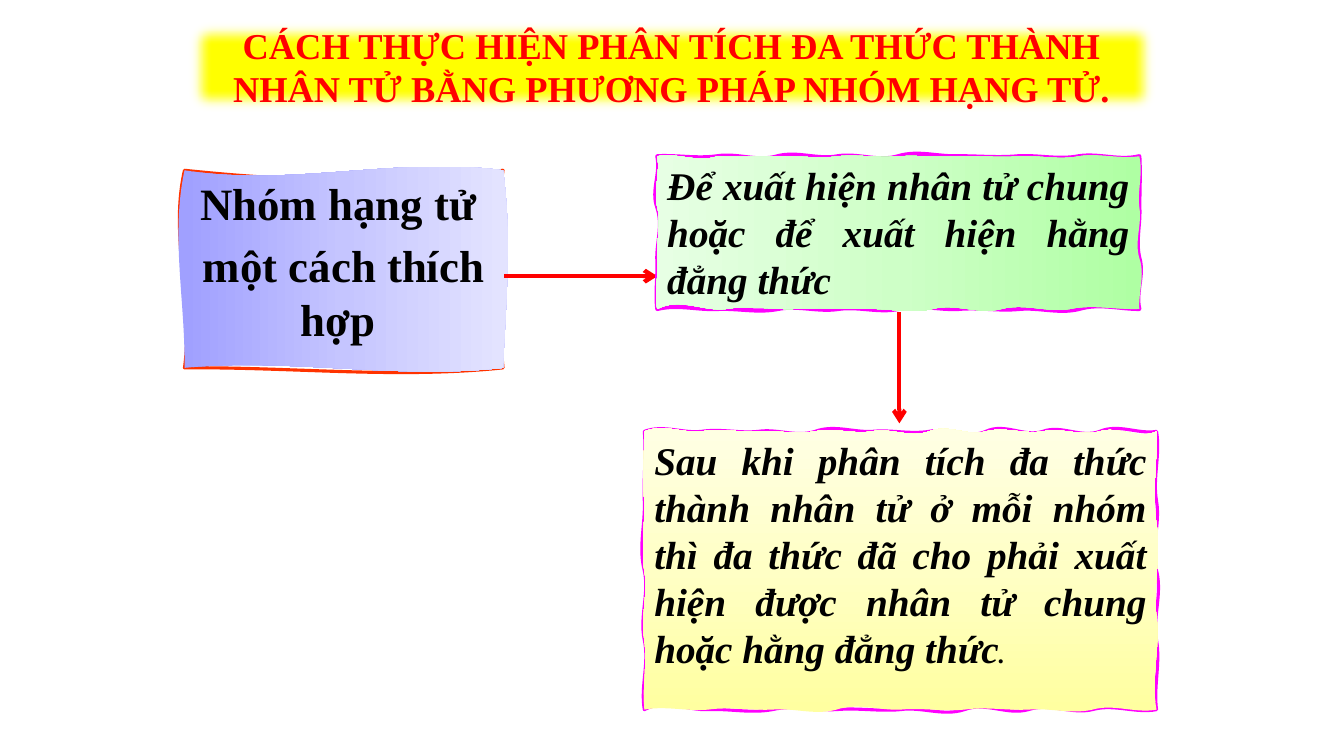
from copy import deepcopy
from dataclasses import dataclass
from typing import Any, NamedTuple

from lxml.etree import SubElement
from pptx import Presentation
from pptx.dml.color import RGBColor
from pptx.enum.shapes import MSO_CONNECTOR, MSO_SHAPE
from pptx.enum.text import MSO_ANCHOR, PP_ALIGN
from pptx.oxml.ns import qn
from pptx.util import Emu, Inches, Pt


@dataclass(frozen=True)
class Theme:
    font: str = "Times New Roman"
    ink: str = "000000"
    red: str = "FF0000"
    orange: str = "FF3300"
    magenta: str = "FF00FF"
    yellow: str = "FFFF00"
    blues: tuple[str, ...] = ("A0A0FF", "C5C5FF", "E3E3FF")
    greens: tuple[str, ...] = ("AFFFA3", "CEFFC7", "E7FFE4")
    creams: tuple[str, ...] = ("FFFFA0", "FFFFC5", "FFFFE3")
    title_size: float = 26
    step_size: float = 32
    note_size: float = 28
    stop_size: float = 18


THEME = Theme()
WIDTH, HEIGHT = Inches(13.33), Inches(7.5)
WOBBLE_UNIT = Inches(0.01)


class Area(NamedTuple):
    """Left, top, width and height in percent of the slide."""
    left: float
    top: float
    width: float
    height: float

    def lengths(self) -> tuple[Emu, Emu, Emu, Emu]:
        return (across(self.left), down(self.top), across(self.width), down(self.height))


class Words(NamedTuple):
    text: str
    size: float
    color: str = THEME.ink
    italic: bool = False


class Contour(NamedTuple):
    """Sideways bends of the curve handles, two for each equal stretch of a side."""
    top: tuple[int, ...]
    right: tuple[int, ...]
    bottom: tuple[int, ...]
    left: tuple[int, ...]


@dataclass(frozen=True)
class SketchBox:
    area: Area
    colors: tuple[str, ...]
    angle: float
    line_color: str
    line_width: float
    align: PP_ALIGN
    paragraphs: list[list[Words]]
    stroke: Contour
    surface: Contour


class Arrow(NamedTuple):
    """Start and end in percent of the slide."""
    start: tuple[float, float]
    end: tuple[float, float]


TITLE_AREA = Area(13.73, 2.27, 72.54, 13.07)
TITLE = Words("CÁCH THỰC HIỆN PHÂN TÍCH ĐA THỨC THÀNH NHÂN TỬ BẰNG PHƯƠNG PHÁP NHÓM HẠNG TỬ.",
              THEME.title_size, THEME.red)
GROUPING = SketchBox(
    Area(13.73, 22.53, 23.7, 26.13), THEME.blues, 0, THEME.orange, 2.25, PP_ALIGN.CENTER,
    [[Words("Nhóm hạng tử ", THEME.step_size)], [Words("một cách thích hợp ", THEME.step_size)]],
    Contour((11, 15), (-10, -6), (11, -1), (9, -15)),
    Contour((17, -14), (9, 3), (12, -10), (1, -14)))
PURPOSE = SketchBox(
    Area(48.91, 20.67, 35.86, 20.2), THEME.greens, 180, THEME.magenta, 3, PP_ALIGN.JUSTIFY,
    [[Words("Để xuất hiện nhân tử chung hoặc để xuất hiện hằng đẳng thức ",
            THEME.note_size, italic=True)]],
    Contour((-1, 3, -3, 6, -5, 4, -3, 6, -6, 1, 0, 2, -1, 4, -3, 5), (1, 0, 1, -4, 5, -4),
            (0, -6, 5, -2, 2, -2, 1, -5, 4, -3, 3, -4, 4, -1, 1, -5), (-2, 1, 0, 6, -6, 4)),
    Contour((-4, 7, 1, 0, -1, 3, -2, 2, -1, 1, -1, 2, -1, 4, -3, 3), (4, -2, 3, -5, 6, -1),
            (1, -5, 4, -6, 6, -6, 5, -1, 0, -1, 1, -4, 3, -12), (-4, 2, -1, 4, -4, 3)))
RESULT = SketchBox(
    Area(47.94, 57.07, 38.11, 36.8), THEME.creams, 90, THEME.magenta, 2.25, PP_ALIGN.JUSTIFY,
    [[Words("Sau khi phân tích đa thức thành nhân tử ở mỗi nhóm thì đa thức đã cho phải xuất "
            "hiện được nhân tử chung hoặc hằng đẳng thức", THEME.note_size, italic=True),
      Words(".", THEME.stop_size, italic=True)]],
    Contour((-7, 2, -3, 2, -3, 6, -7, 1, -2, 3, -4, 8, -9, 6, -7, 7, -8, 3),
            (4, -4, 4, -6, 6, -4, 4, -3),
            (4, -6, 5, -7, 6, -8, 7, -3, 2, -2, 1, -5, 4, -1, 1, -11),
            (-4, 5, -5, 5, -6, 1, -1, 2)),
    Contour((-8, 2, -3, 1, -1, 3, -4, 3, -4, 7, -8, 5, -5, 3, -4, 5, -6, 9),
            (1, -5, 5, -4, 4, -6),
            (4, -6, 5, -2, 1, -3, 2, -2, 1, -7, 6, -2, 1, -3, 2, -4),
            (-2, 3, -4, 4, -4, 1, -2, 0)))
ARROWS = (Arrow((37.51, 36.53), (48.91, 36.53)), Arrow((66.92, 41.33), (66.92, 56)))


def across(percent: float) -> Emu:
    return Emu(round(WIDTH * percent / 100))


def down(percent: float) -> Emu:
    return Emu(round(HEIGHT * percent / 100))


def set_values(target: Any, values: dict[str, Any]) -> None:
    for name, value in values.items():
        setattr(target, name, value)


def write_text(shape: Any, paragraphs: list[list[Words]], align: PP_ALIGN,
               anchor: MSO_ANCHOR) -> None:
    frame = shape.text_frame
    set_values(frame, {"word_wrap": True, "vertical_anchor": anchor})
    for index, pieces in enumerate(paragraphs):
        paragraph = frame.add_paragraph() if index else frame.paragraphs[0]
        paragraph.alignment = align
        if index:
            paragraph.space_before = Pt(pieces[0].size * 0.2)
        for words in pieces:
            run = paragraph.add_run()
            run.text = words.text
            set_values(run.font, {"name": THEME.font, "size": Pt(words.size),
                                  "bold": True, "italic": words.italic})
            run.font.color.rgb = RGBColor.from_string(words.color)


def add_point(parent: Any, x: float, y: float) -> None:
    SubElement(parent, qn("a:pt"), x=str(round(x)), y=str(round(y)))


def add_contour(path_list: Any, contour: Contour, width: int, height: int,
                flags: dict[str, str]) -> None:
    """Add a closed curved path that runs clockwise from the top left corner."""
    path = SubElement(path_list, qn("a:path"), w=str(width), h=str(height), **flags)
    add_point(SubElement(path, qn("a:moveTo")), 0, 0)
    corners = [(0, 0), (width, 0), (width, height), (0, height)]
    for index, bends in enumerate(contour):
        (x0, y0), (x1, y1) = corners[index], corners[(index + 1) % 4]
        steps = len(bends) // 2 * 3
        for step in range(1, steps + 1):
            stretch, place = divmod(step - 1, 3)
            if place == 0:
                curve = SubElement(path, qn("a:cubicBezTo"))
            bend = bends[stretch * 2 + place] * WOBBLE_UNIT if place < 2 else 0
            share = step / steps
            add_point(curve, x0 + (x1 - x0) * share + bend * (index % 2),
                      y0 + (y1 - y0) * share + bend * (1 - index % 2))
    SubElement(path, qn("a:close"))


def fill_gradient(fill: Any, colors: tuple[str, ...], angle: float) -> None:
    fill.gradient()
    fill.gradient_angle = angle
    first = fill.gradient_stops[0]._gs
    first.addnext(deepcopy(first))
    for index, (stop, color) in enumerate(zip(fill.gradient_stops, colors)):
        stop.position = index / (len(colors) - 1)
        stop.color.rgb = RGBColor.from_string(color)


def draw_sketch_box(slide: Any, box: SketchBox) -> None:
    left, top, width, height = box.area.lengths()
    builder = slide.shapes.build_freeform(left, top)
    builder.add_line_segments([(left + width, top), (left + width, top + height),
                               (left, top + height)])
    shape = builder.convert_to_shape()
    path_list = shape._element.spPr.find(".//" + qn("a:pathLst"))
    path_list.remove(path_list[0])
    add_contour(path_list, box.stroke, width, height, {"fill": "none"})
    add_contour(path_list, box.surface, width, height, {"stroke": "0"})
    fill_gradient(shape.fill, box.colors, box.angle)
    shape.line.color.rgb = RGBColor.from_string(box.line_color)
    shape.line.width = Pt(box.line_width)
    shape.shadow.inherit = False
    write_text(shape, box.paragraphs, box.align, MSO_ANCHOR.TOP)


def draw_title(slide: Any) -> None:
    shape = slide.shapes.add_shape(MSO_SHAPE.RECTANGLE, *TITLE_AREA.lengths())
    shape.fill.solid()
    shape.fill.fore_color.rgb = RGBColor.from_string(THEME.yellow)
    shape.line.fill.background()
    shape.shadow.inherit = False
    effects = shape._element.spPr.find(qn("a:effectLst"))
    SubElement(effects, qn("a:softEdge"), rad=str(Pt(10)))
    write_text(shape, [[TITLE]], PP_ALIGN.CENTER, MSO_ANCHOR.MIDDLE)


def draw_arrow(slide: Any, arrow: Arrow) -> None:
    (x0, y0), (x1, y1) = arrow
    connector = slide.shapes.add_connector(MSO_CONNECTOR.STRAIGHT, across(x0), down(y0),
                                           across(x1), down(y1))
    connector.line.color.rgb = RGBColor.from_string(THEME.red)
    connector.line.width = Pt(3)
    SubElement(connector.line._get_or_add_ln(), qn("a:tailEnd"), type="arrow")
    SubElement(connector._element.spPr, qn("a:effectLst"))


def main() -> None:
    presentation = Presentation()
    set_values(presentation, {"slide_width": WIDTH, "slide_height": HEIGHT})
    slide = presentation.slides.add_slide(presentation.slide_layouts[6])
    draw_sketch_box(slide, GROUPING)
    for arrow in ARROWS:
        draw_arrow(slide, arrow)
    draw_sketch_box(slide, PURPOSE)
    draw_title(slide)
    draw_sketch_box(slide, RESULT)
    presentation.save("out.pptx")


if __name__ == "__main__":
    main()
